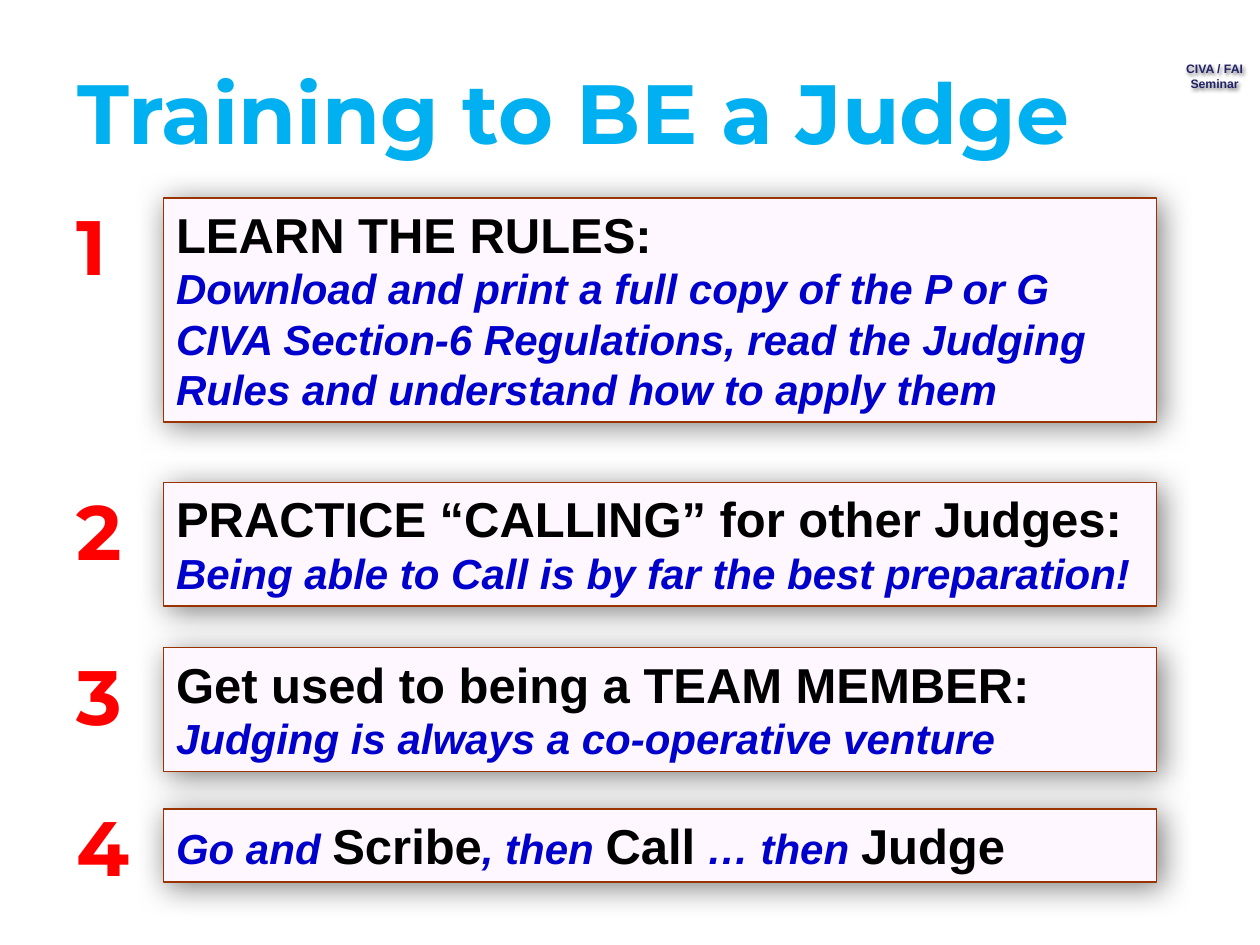
"""Build the slide on the four steps of training to be a judge."""
from dataclasses import dataclass

from lxml.etree import SubElement
from pptx import Presentation
from pptx.dml.color import RGBColor
from pptx.enum.shapes import MSO_SHAPE
from pptx.enum.text import MSO_ANCHOR, PP_ALIGN
from pptx.oxml.ns import qn
from pptx.util import Cm, Pt

TITLE = "Training to BE a Judge"
LABEL = ["CIVA / FAI", "Seminar"]
BREAK = ("break", "")
STEPS = [
    (3.99, 4.52, [
        ("head", "LEARN THE RULES:"), BREAK,
        ("note", "Download and print a full copy of the P or G CIVA Section-6 Regulations, "
                 "read the Judging Rules and understand how to apply them")]),
    (9.73, 2.49, [
        ("head", "PRACTICE “CALLING” for other Judges:"), BREAK,
        ("note", "Being able to Call is by far the best preparation!")]),
    (13.06, 2.49, [
        ("head", "Get used to being a TEAM MEMBER:"), BREAK,
        ("note", "Judging is always a co-operative venture")]),
    (16.31, 1.47, [
        ("note", "Go and "), ("head", "Scribe"), ("note", ", then "), ("head", "Call"),
        ("note", " … then "), ("head", "Judge")]),
]
BOX_LEFT, BOX_WIDTH = 3.3, 20.02
NUMBER_LEFT, NUMBER_WIDTH, NUMBER_HEIGHT = 1.3, 1.6, 1.9


@dataclass(frozen=True)
class Theme:
    body: str = "Arial"
    display: str = "Montserrat"
    title: tuple = (48, "00B0F0")
    number: tuple = (44, "FF0000")
    label: tuple = (7, "222267")
    head: tuple = (28, "000000")
    note: tuple = (24, "0000CC")
    fill: str = "FFF7FF"
    line: str = "993300"
    shadow: str = "808080"


THEME = Theme()


def set_font(font, style, name):
    size, color = style
    font.name, font.size, font.bold = name, Pt(size), True
    font.color.rgb = RGBColor.from_string(color)


def add_shadow(shape, blur, distance):
    shape.shadow.inherit = False
    effects = shape._element.spPr.find(qn("a:effectLst"))
    outer = SubElement(effects, qn("a:outerShdw"), blurRad=str(Pt(blur)),
                       dist=str(Pt(distance)), dir="2700000", algn="ctr", rotWithShape="0")
    SubElement(outer, qn("a:srgbClr"), val=THEME.shadow)


def add_text(page, place, lines, style, name, anchor=MSO_ANCHOR.MIDDLE,
             align=PP_ALIGN.LEFT, wrap=True):
    box = page.shapes.add_textbox(*map(Cm, place))
    frame = box.text_frame
    frame.word_wrap, frame.vertical_anchor = wrap, anchor
    frame.text = "\n".join(lines)
    for para in frame.paragraphs:
        para.alignment = align
        set_font(para.font, style, name)
    return box


def add_step(page, number, top, height, spans):
    box = page.shapes.add_shape(MSO_SHAPE.RECTANGLE, Cm(BOX_LEFT), Cm(top),
                                Cm(BOX_WIDTH), Cm(height))
    box.fill.solid()
    box.fill.fore_color.rgb = RGBColor.from_string(THEME.fill)
    box.line.color.rgb = RGBColor.from_string(THEME.line)
    box.line.width = Pt(0.75)
    add_shadow(box, 18, 2.8)
    frame = box.text_frame
    frame.word_wrap, frame.vertical_anchor = True, MSO_ANCHOR.TOP
    para = frame.paragraphs[0]
    para.alignment = PP_ALIGN.LEFT
    for kind, words in spans:
        if kind == "break":
            para.add_line_break()
            continue
        span = para.add_run()
        span.text = words
        set_font(span.font, getattr(THEME, kind), THEME.body)
        span.font.italic = kind == "note"
    number_top = min(top, top + (height - NUMBER_HEIGHT) / 2)
    add_text(page, (NUMBER_LEFT, number_top, NUMBER_WIDTH, NUMBER_HEIGHT),
             [str(number)], THEME.number, THEME.display)


def main():
    deck = Presentation()
    deck.slide_width, deck.slide_height = Cm(25.4), Cm(19.05)
    page = deck.slides.add_slide(deck.slide_layouts[6])
    label = add_text(page, (23.62, 1.12, 1.73, 0.86), LABEL, THEME.label, THEME.body,
                     MSO_ANCHOR.TOP, PP_ALIGN.CENTER, wrap=False)
    add_shadow(label, 2, 1.5)
    add_text(page, (1.32, 0.64, 22.35, 3.18), [TITLE], THEME.title, THEME.display)
    for number, step in enumerate(STEPS, 1):
        add_step(page, number, *step)
    deck.save("out.pptx")


if __name__ == "__main__":
    main()
